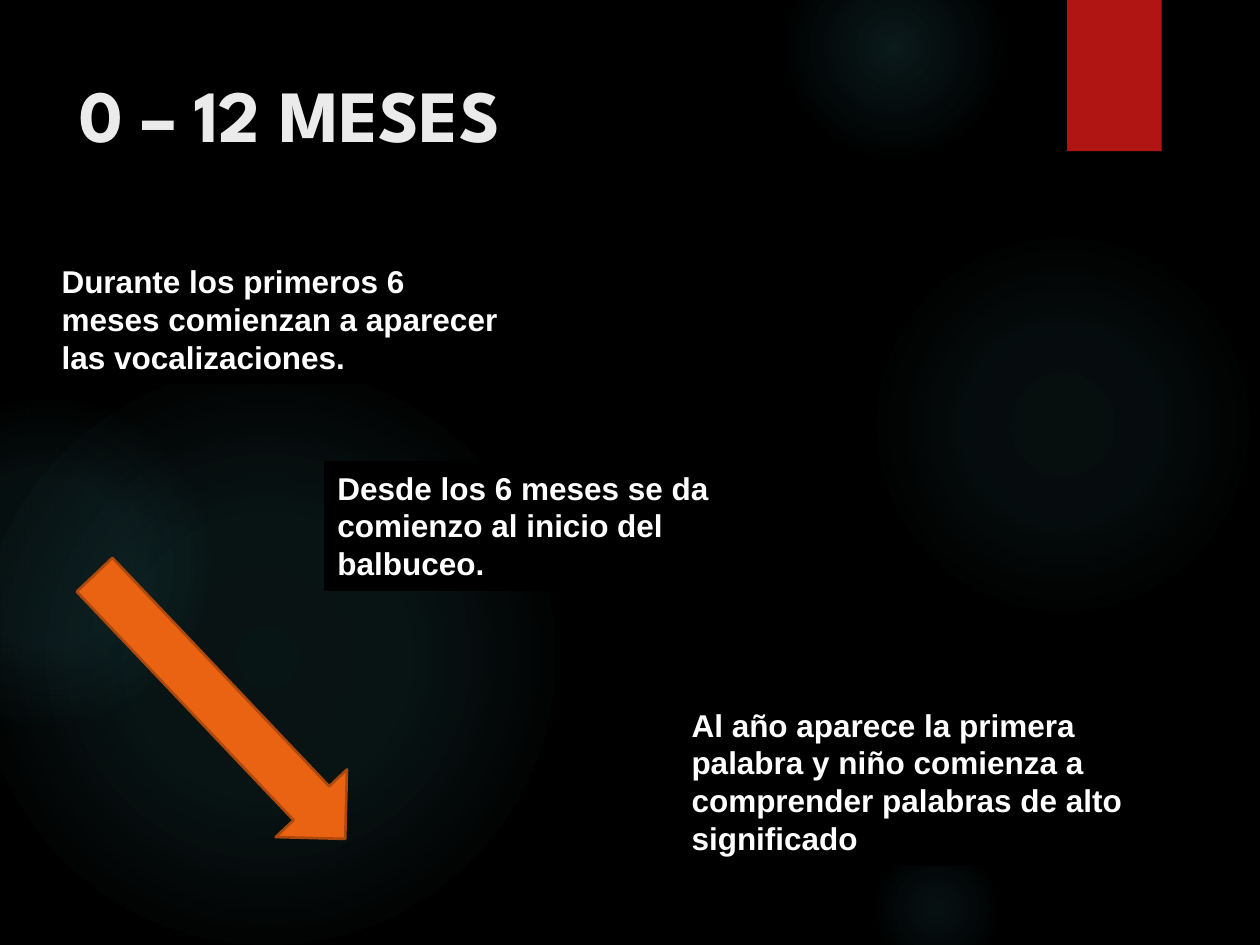
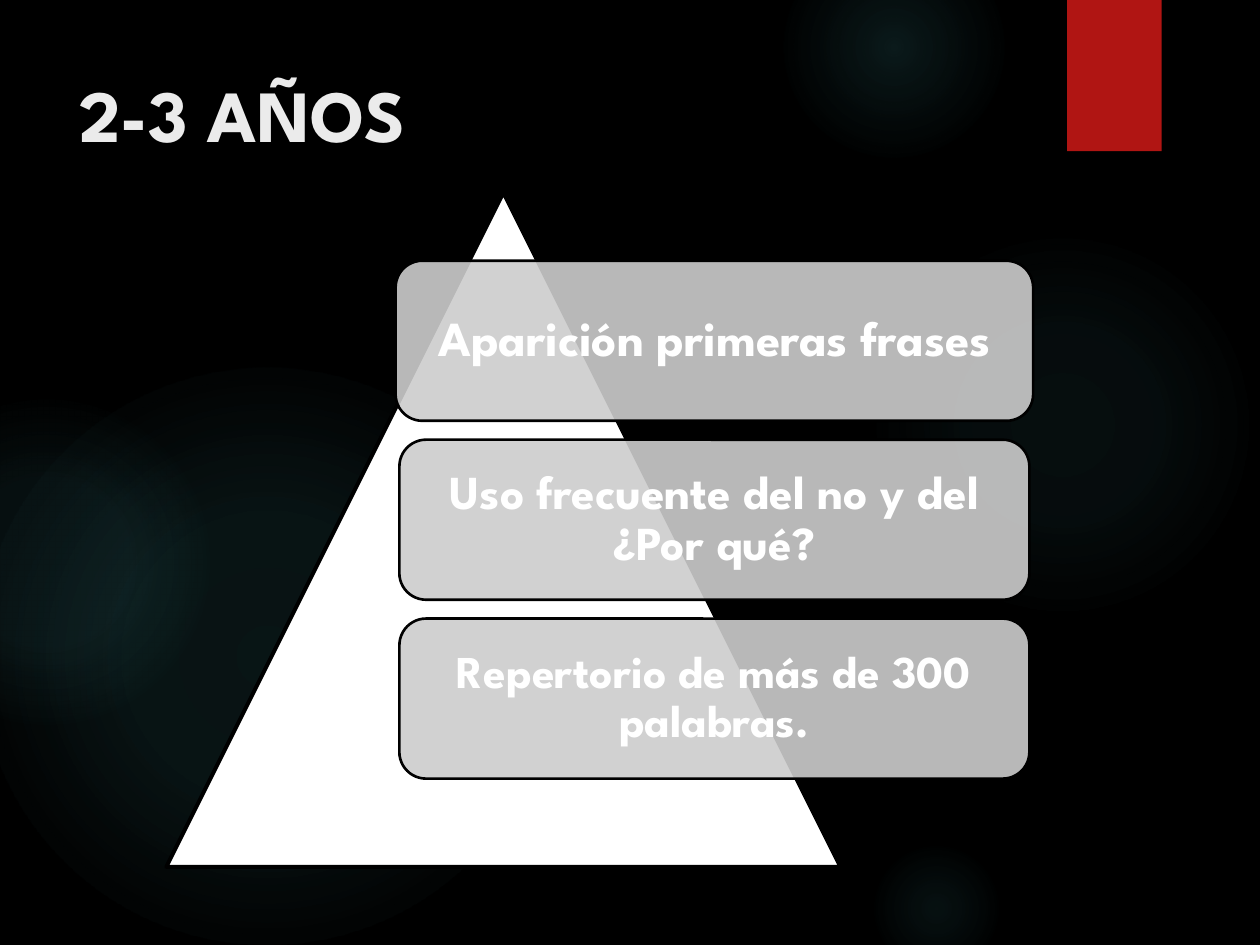
from dataclasses import dataclass

from lxml.etree import SubElement
from pptx import Presentation
from pptx.dml.color import RGBColor
from pptx.enum.shapes import MSO_SHAPE
from pptx.enum.text import MSO_ANCHOR, PP_ALIGN
from pptx.oxml import parse_xml
from pptx.oxml.ns import nsdecls, qn
from pptx.util import Inches, Pt

COLUMNS, ROWS = 100, 75
SLIDE_WIDTH, SLIDE_HEIGHT = Inches(10), Inches(7.5)


@dataclass(frozen=True)
class Theme:
    background: str = "000000"
    glow: str = "50B9C1"
    tab: str = "B01513"
    title: str = "EBEBEB"
    text: str = "FFFFFF"
    outline: str = "000000"
    arrow: str = "EA6312"
    arrow_outline: str = "AD490D"
    pyramid: str = "FFFFFF"
    card: str = "CCCCCC"
    heading_font: str = "League Spartan"
    body_font: str = "Arial"
    title_size: int = 42
    body_size: int = 18
    body_leading: float = 21.6
    card_sizes: tuple = (28, 27, 26)
    thin: float = 1.5
    thick: float = 2.25


THEME = Theme()


@dataclass(frozen=True)
class Box:
    left: float
    top: float
    width: float
    height: float

    def area(self, left, top, width, height):
        return Box(self.left + left, self.top + top, width, height)

    def lengths(self):
        column, row = SLIDE_WIDTH / COLUMNS, SLIDE_HEIGHT / ROWS
        return [round(value) for value in (self.left * column, self.top * row,
                                           self.width * column, self.height * row)]


PAGE = Box(0, 0, COLUMNS, ROWS)

GLOWS = (
    (68.9, 18.3, 30.8, ((0, 7), (36, 6), (69, 0))),
    (62.2, -5, 17.5, ((0, 14), (36, 7), (73, 0))),
    (68.9, 66.7, 10.8, ((0, 9), (36, 5), (66, 0))),
    (-1.7, 29.2, 45.8, ((0, 11), (36, 10), (75, 0))),
    (-9.2, 31.7, 25.8, ((0, 8), (36, 8), (72, 0))),
)


def apply_format(target, values):
    for name, value in values.items():
        setattr(target, name, value)


def add_box_shape(slide, kind, box, fill=None, outline=None, outline_width=THEME.thin):
    shape = slide.shapes.add_shape(kind, *box.lengths())
    shape.shadow.inherit = False
    if fill:
        shape.fill.solid()
        shape.fill.fore_color.rgb = RGBColor.from_string(fill)
    if outline:
        shape.line.color.rgb = RGBColor.from_string(outline)
        shape.line.width = Pt(outline_width)
    else:
        shape.line.fill.background()
    return shape


def write_text(shape, text, font, size, color, frame_format, paragraph_format):
    frame = shape.text_frame
    apply_format(frame, {"word_wrap": True, **frame_format})
    paragraph = frame.paragraphs[0]
    apply_format(paragraph, paragraph_format)
    run = paragraph.add_run()
    run.text = text
    apply_format(run.font, {"name": font, "size": Pt(size), "bold": True})
    run.font.color.rgb = RGBColor.from_string(color)


def set_opacity(shape, percent):
    color = shape._element.spPr.find(qn("a:solidFill")).find(qn("a:srgbClr"))
    SubElement(color, qn("a:alpha"), val=str(percent * 1000))


def set_radial_glow(shape, stops):
    stop_xml = "".join(
        f'<a:gs pos="{position * 1000}"><a:srgbClr val="{THEME.glow}">'
        f'<a:alpha val="{opacity * 1000}"/></a:srgbClr></a:gs>'
        for position, opacity in stops)
    gradient = parse_xml(
        f'<a:gradFill {nsdecls("a")} rotWithShape="1"><a:gsLst>{stop_xml}</a:gsLst>'
        '<a:path path="circle"><a:fillToRect l="50000" t="50000" r="50000" b="50000"/>'
        '</a:path></a:gradFill>')
    shape._element.spPr.find(qn("a:prstGeom")).addnext(gradient)


def add_backdrop(slide, box):
    slide.background.fill.solid()
    slide.background.fill.fore_color.rgb = RGBColor.from_string(THEME.background)
    for left, top, diameter, stops in GLOWS:
        glow = add_box_shape(slide, MSO_SHAPE.OVAL, box.area(left, top, diameter, diameter))
        set_radial_glow(glow, stops)
    add_box_shape(slide, MSO_SHAPE.RECTANGLE, box.area(84.7, 0, 7.5, 12), THEME.tab)


def add_title(slide, box, text):
    title = slide.shapes.add_textbox(*box.lengths())
    write_text(title, text, THEME.heading_font, THEME.title_size, THEME.title,
               {"vertical_anchor": MSO_ANCHOR.TOP}, {"alignment": PP_ALIGN.LEFT})


def add_stage(slide, box, text):
    stage = add_box_shape(slide, MSO_SHAPE.RECTANGLE, box, THEME.background, THEME.outline)
    write_text(stage, text, THEME.body_font, THEME.body_size, THEME.text,
               {"vertical_anchor": MSO_ANCHOR.TOP},
               {"alignment": PP_ALIGN.LEFT, "line_spacing": Pt(THEME.body_leading)})


def add_stages(slide, box, stages):
    for left, top, line_count, text in stages:
        add_stage(slide, box.area(left, top, 37.5, 3 * line_count + 1.1), text)
    arrow = add_box_shape(slide, MSO_SHAPE.RIGHT_ARROW, box.area(-0.9, 31.9, 28.9, 7.8),
                          THEME.arrow, THEME.arrow_outline)
    arrow.rotation = 46.5


def add_card(slide, box, text, size):
    card = add_box_shape(slide, MSO_SHAPE.ROUNDED_RECTANGLE, box, THEME.card, THEME.outline)
    set_opacity(card, 90)
    margins = dict.fromkeys(
        ("margin_left", "margin_top", "margin_right", "margin_bottom"), Inches(0.11))
    write_text(card, text, THEME.heading_font, size, THEME.text,
               {"vertical_anchor": MSO_ANCHOR.MIDDLE, **margins},
               {"alignment": PP_ALIGN.CENTER, "line_spacing": 0.9})


def add_pyramid_list(slide, box, items):
    add_box_shape(slide, MSO_SHAPE.ISOSCELES_TRIANGLE, box, THEME.pyramid,
                  THEME.outline, THEME.thick)
    center, first_top, pitch, height = 43.5, 5.4, 14.2, 12.7
    widths = (50.6, 50, 50)
    for index, (text, width, size) in enumerate(zip(items, widths, THEME.card_sizes)):
        card_box = box.area(center - width / 2, first_top + index * pitch, width, height)
        add_card(slide, card_box, text, size)


def add_page(presentation, title):
    slide = presentation.slides.add_slide(presentation.slide_layouts[6])
    add_backdrop(slide, PAGE)
    add_title(slide, PAGE.area(5.3, 5, 77.2, 15.3), title)
    return slide


def build_first_year(presentation):
    slide = add_page(presentation, "0 – 12 MESES")
    add_stages(slide, PAGE.area(3.9, 20.3, 87.5, 48.3), (
        (0, 0, 3, "Durante los primeros 6 meses comienzan a aparecer las vocalizaciones."),
        (21.9, 16.4, 3, "Desde los 6 meses se da comienzo al inicio del balbuceo."),
        (50, 35.2, 4, "Al año aparece la primera palabra y niño comienza a "
                      "comprender palabras de alto significado"),
    ))


def build_two_to_three_years(presentation):
    slide = add_page(presentation, "2-3 AÑOS")
    add_pyramid_list(slide, PAGE.area(13.2, 15.3, 53.5, 53.5), (
        "Aparición primeras frases",
        "Uso frecuente del no y del ¿Por qué?",
        "Repertorio de más de 300 palabras.",
    ))


def main():
    presentation = Presentation()
    apply_format(presentation, {"slide_width": SLIDE_WIDTH, "slide_height": SLIDE_HEIGHT})
    build_first_year(presentation)
    build_two_to_three_years(presentation)
    presentation.save("out.pptx")


if __name__ == "__main__":
    main()
